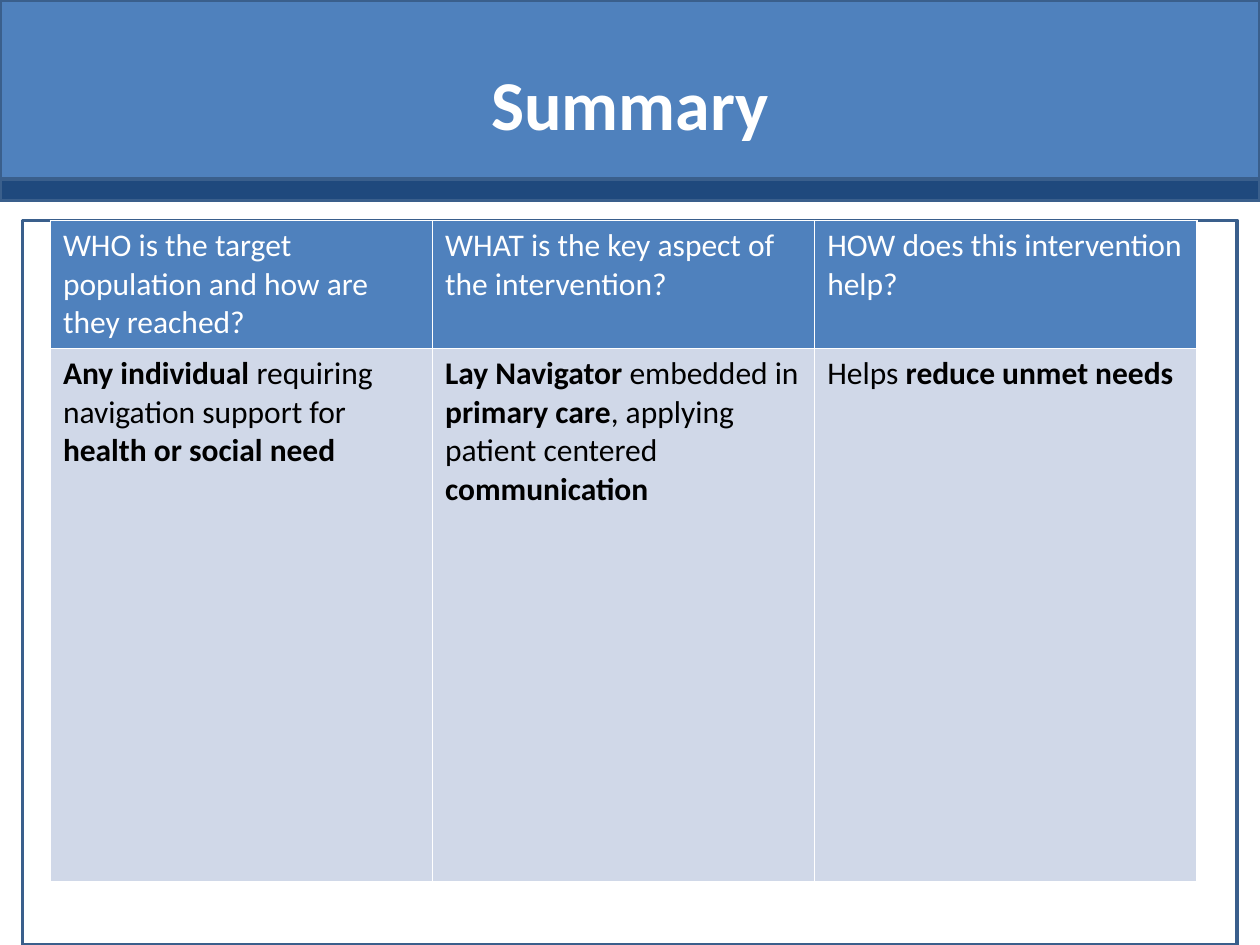
from dataclasses import dataclass

from lxml.etree import SubElement
from pptx import Presentation
from pptx.dml.color import RGBColor
from pptx.enum.shapes import MSO_SHAPE
from pptx.enum.text import MSO_ANCHOR, PP_ALIGN
from pptx.oxml.ns import qn
from pptx.util import Inches, Pt


@dataclass(frozen=True)
class Theme:
    font: str = "Calibri"
    title_size: int = 40
    body_size: int = 18
    white: str = "FFFFFF"
    black: str = "000000"
    blue: str = "4F81BD"
    navy: str = "1F497D"
    outline: str = "3A5F8C"
    pale: str = "D0D8E8"


def write_text(frame, spans, *, font, size, color, align=PP_ALIGN.LEFT):
    """Fill a frame with one paragraph of (text, bold) spans."""
    para = frame.paragraphs[0]
    para.alignment = align
    for text, bold in spans:
        span = para.add_run()
        span.text = text
        span.font.name = font
        span.font.size = Pt(size)
        span.font.bold = bold
        span.font.color.rgb = RGBColor.from_string(color)


class SlideBuilder:
    def __init__(self, page, theme):
        self.page = page
        self.theme = theme

    def panel(self, left, top, width, height, fill):
        box = self.page.shapes.add_shape(
            MSO_SHAPE.RECTANGLE, Inches(left), Inches(top), Inches(width), Inches(height))
        box.shadow.inherit = False
        box.fill.solid()
        box.fill.fore_color.rgb = RGBColor.from_string(fill)
        box.line.color.rgb = RGBColor.from_string(self.theme.outline)
        box.line.width = Pt(2)

    def title(self, text, left, top, width, height):
        box = self.page.shapes.title
        box.left, box.top = Inches(left), Inches(top)
        box.width, box.height = Inches(width), Inches(height)
        box.text_frame.vertical_anchor = MSO_ANCHOR.MIDDLE
        write_text(box.text_frame, [(text, True)], font=self.theme.font,
                   size=self.theme.title_size, color=self.theme.white,
                   align=PP_ALIGN.CENTER)
        # Bring the title in front of the panels
        box.element.getparent().append(box.element)

    def borders(self, cell, color, width):
        properties = cell._tc.get_or_add_tcPr()
        for side in ("lnL", "lnR", "lnT", "lnB"):
            line = SubElement(properties, qn(f"a:{side}"), w=str(Pt(width)))
            fill = SubElement(line, qn("a:solidFill"))
            SubElement(fill, qn("a:srgbClr"), val=color)

    def table(self, rows, left, top, width, row_heights):
        columns = len(rows[0])
        table = self.page.shapes.add_table(
            len(rows), columns, Inches(left), Inches(top),
            Inches(width), Inches(sum(row_heights))).table
        for column in table.columns:
            column.width = Inches(width / columns)
        for index, (spans_by_cell, height) in enumerate(zip(rows, row_heights)):
            table.rows[index].height = Inches(height)
            header = index == 0
            fill = self.theme.blue if header else self.theme.pale
            color = self.theme.white if header else self.theme.black
            for cell, spans in zip(table.rows[index].cells, spans_by_cell):
                self.borders(cell, self.theme.white, 1)
                cell.fill.solid()
                cell.fill.fore_color.rgb = RGBColor.from_string(fill)
                write_text(cell.text_frame, spans, font=self.theme.font,
                           size=self.theme.body_size, color=color)


QUESTIONS = [
    "WHO is the target population and how are they reached?",
    "WHAT is the key aspect of the intervention?",
    "HOW does this intervention help?",
]
ANSWERS = [
    [("Any individual ", True), ("requiring navigation support for ", False),
     ("health or social need", True)],
    [("Lay Navigator ", True), ("embedded in ", False), ("primary care", True),
     (", applying patient centered ", False), ("communication", True)],
    [("Helps ", False), ("reduce unmet needs", True)],
]


def main():
    deck = Presentation()
    deck.slide_width, deck.slide_height = Inches(10), Inches(7.5)
    theme = Theme()
    builder = SlideBuilder(deck.slides.add_slide(deck.slide_layouts[5]), theme)

    # Content frame and title band
    builder.panel(0.18, 1.75, 9.64, 5.75, theme.white)
    builder.panel(0, 0, 10, 1.42, theme.blue)
    builder.panel(0, 1.42, 10, 0.17, theme.navy)
    builder.title("Summary", 0.5, 0.19, 9, 1.25)

    # Summary table
    header = [[(question, False)] for question in QUESTIONS]
    builder.table([header, ANSWERS], 0.4, 1.75, 9.1, [1, 4.23])

    deck.save("out.pptx")


if __name__ == "__main__":
    main()
